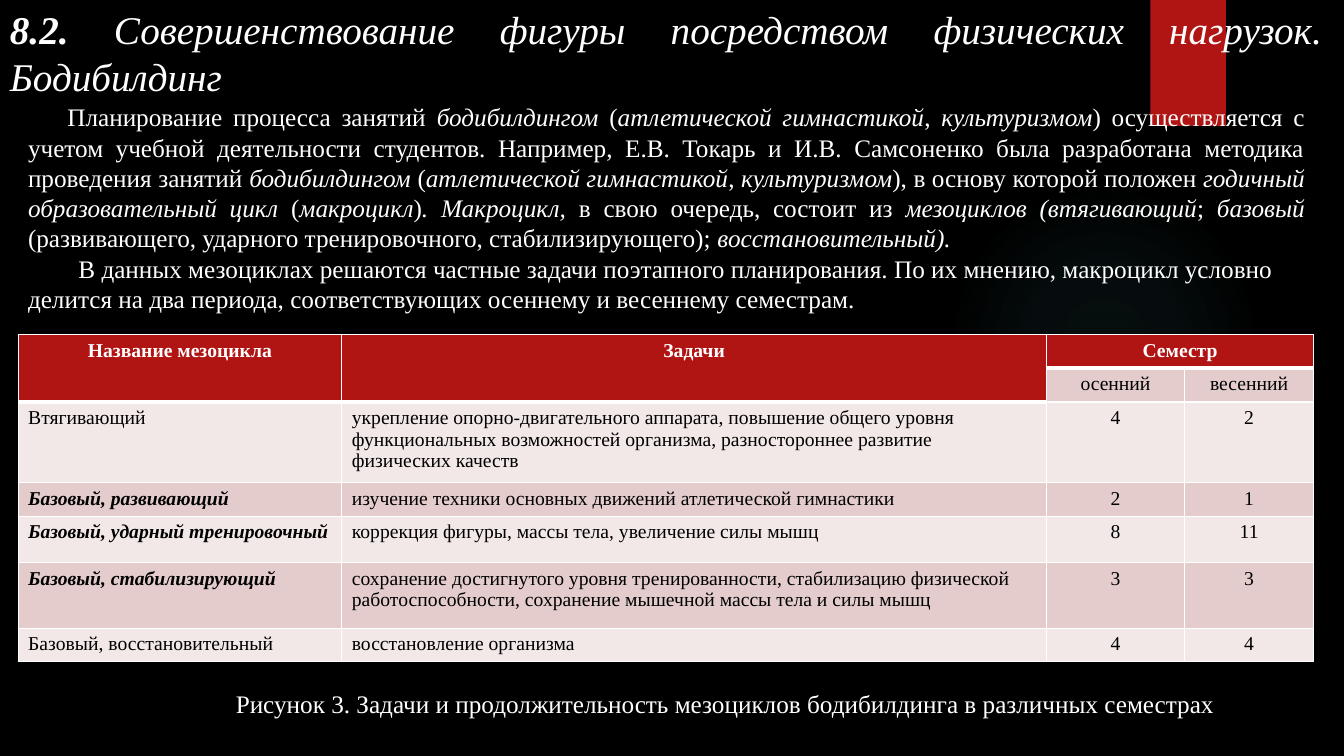
from lxml.etree import SubElement
from pptx import Presentation
from pptx.dml.color import RGBColor
from pptx.enum.shapes import MSO_SHAPE as Shape
from pptx.enum.text import MSO_AUTO_SIZE as AutoSize, PP_ALIGN as Align
from pptx.oxml import parse_xml
from pptx.oxml.ns import nsdecls, qn
from pptx.util import Inches, Pt

FONT = "Times New Roman"
WHITE, BLACK, RED = "FFFFFF", "000000", "B01513"
BANDS = ["F2E8E7", "E4CCCC"]


def color(value):
    return RGBColor.from_string(value)


def style(font, size, value, bold=False, italic=False):
    font.name, font.size = FONT, Pt(size)
    font.bold, font.italic = bold, italic
    font.color.rgb = color(value)


presentation = Presentation()
presentation.slide_width, presentation.slide_height = Inches(13.33), Inches(7.5)
slide = presentation.slides.add_slide(presentation.slide_layouts[6])
slide.background.fill.solid()
slide.background.fill.fore_color.rgb = color(BLACK)

# Soft glow
glow = slide.shapes.add_shape(Shape.OVAL, Inches(9.41), Inches(1.83), Inches(3.08), Inches(3.08))
glow.shadow.inherit = False
glow.line.fill.background()
glow.fill.background()
stops = "".join(
    f'<a:gs pos="{position * 1000}"><a:srgbClr val="50B9C1">'
    f'<a:alpha val="{alpha * 1000}"/></a:srgbClr></a:gs>'
    for position, alpha in [(0, 7), (36, 6), (69, 0), (100, 0)])
gradient = parse_xml(
    f'<a:gradFill {nsdecls("a")} rotWithShape="1"><a:gsLst>{stops}</a:gsLst><a:path path="circle">'
    '<a:fillToRect l="50000" t="50000" r="50000" b="50000"/></a:path></a:gradFill>')
properties = glow.element.spPr
properties.replace(properties.find(qn("a:noFill")), gradient)

# Red ribbon with a shadow
ribbon = slide.shapes.add_shape(Shape.RECTANGLE, Inches(11.41), 0, Inches(0.75), Inches(1.25))
ribbon.fill.solid()
ribbon.fill.fore_color.rgb = color(RED)
ribbon.line.fill.background()
ribbon.shadow.inherit = False
ribbon.element.spPr.find(qn("a:effectLst")).append(parse_xml(
    f'<a:outerShdw {nsdecls("a")} blurRad="{Pt(3)}" dist="{Pt(2)}" dir="5400000" rotWithShape="0">'
    f'<a:srgbClr val="{BLACK}"><a:alpha val="45000"/></a:srgbClr></a:outerShdw>'))

# Title
title = slide.shapes.add_textbox(0, 0, Inches(13.21), Inches(1.51))
title.text_frame.word_wrap = True
title.text_frame.auto_size = AutoSize.SHAPE_TO_FIT_TEXT
paragraph = title.text_frame.paragraphs[0]
paragraph.alignment = Align.JUSTIFY
for text, bold in [
        ("8.2. ", True),
        ("Совершенствование фигуры посредством физических нагрузок. Бодибилдинг", False)]:
    run = paragraph.add_run()
    run.text = text
    style(run.font, 28, WHITE, bold, True)

# Body: asterisks switch italics on and off
body_paragraphs = [
    ("Планирование процесса занятий *бодибилдингом *(*атлетической гимнастикой*, *культуризмом*) "
     "осуществляется с учетом учебной деятельности студентов. Например, Е.В. Токарь и "
     "И.В. Самсоненко была разработана методика проведения занятий *бодибилдингом *("
     "*атлетической гимнастикой*, *культуризмом*), в основу которой положен *годичный "
     "образовательный цикл *(*макроцикл*)*. Макроцикл, *в свою очередь, состоит из "
     "*мезоциклов (втягивающий*; *базовый *(развивающего, ударного тренировочного, "
     "стабилизирующего); *восстановительный).", Align.JUSTIFY, 0.39),
    ("В данных мезоциклах решаются частные задачи поэтапного планирования. По их мнению, "
     "макроцикл условно делится на два периода, соответствующих осеннему и весеннему "
     "семестрам.", Align.LEFT, 0.5),
]
body = slide.shapes.add_textbox(Inches(0.18), Inches(0.96), Inches(12.86), Inches(2.22))
body.text_frame.word_wrap = True
body.text_frame.auto_size = AutoSize.SHAPE_TO_FIT_TEXT
for index, (text, alignment, indent) in enumerate(body_paragraphs):
    paragraph = body.text_frame.add_paragraph() if index else body.text_frame.paragraphs[0]
    paragraph.alignment = alignment
    paragraph._p.get_or_add_pPr().set("indent", str(Inches(indent)))
    for part, words in enumerate(text.split("*")):
        run = paragraph.add_run()
        run.text = words
        style(run.font, 18, WHITE, italic=part % 2 == 1)

# Table of mesocycles
rows = [
    ("Название мезоцикла", "Задачи", "Семестр", ""),
    ("", "", "осенний", "весенний"),
    ("Втягивающий", "укрепление опорно-двигательного аппарата, повышение общего уровня "
     "функциональных возможностей организма, разностороннее развитие физических качеств", "4", "2"),
    ("Базовый, развивающий", "изучение техники основных движений атлетической гимнастики", "2", "1"),
    ("Базовый, ударный тренировочный", "коррекция фигуры, массы тела, увеличение силы мышц",
     "8", "11"),
    ("Базовый, стабилизирующий", "сохранение достигнутого уровня тренированности, стабилизацию "
     "физической работоспособности, сохранение мышечной массы тела и силы мышц", "3", "3"),
    ("Базовый, восстановительный", "восстановление организма", "4", "4"),
]
table = slide.shapes.add_table(
    len(rows), 4, Inches(0.18), Inches(3.32), Inches(12.86), Inches(3.24)).table
for column, width in zip(table.columns, [3.21, 6.99, 1.37, 1.28]):
    column.width = Inches(width)
for row, height in zip(table.rows, [0.33, 0.33, 0.8, 0.33, 0.46, 0.65, 0.33]):
    row.height = Inches(height)
for first, last in [((0, 0), (1, 0)), ((0, 1), (1, 1)), ((0, 2), (0, 3))]:
    table.cell(*first).merge(table.cell(*last))

for r, values in enumerate(rows):
    for c, value in enumerate(values):
        cell = table.cell(r, c)
        header = r == 0 or (r == 1 and c < 2)
        below_header = r == (2 if c < 2 else 1)
        # Borders come before the fill; the header has a heavy lower edge
        widths = {"a:lnL": 1, "a:lnR": 1, "a:lnT": 3 if below_header else 1,
                  "a:lnB": 3 if header else 1}
        for tag, width in widths.items():
            line = SubElement(cell._tc.get_or_add_tcPr(), qn(tag), w=str(Pt(width)))
            SubElement(SubElement(line, qn("a:solidFill")), qn("a:srgbClr"), val=WHITE)
        cell.fill.solid()
        cell.fill.fore_color.rgb = color(RED if header else BANDS[r % 2])
        if value:
            cell.text_frame.text = value
            paragraph = cell.text_frame.paragraphs[0]
            paragraph.alignment = Align.CENTER if header or c > 1 else Align.LEFT
            emphasis = c == 0 and r in (3, 4, 5)
            style(paragraph.runs[0].font, 14, WHITE if header else BLACK,
                  header or emphasis, emphasis)

# Caption
caption = slide.shapes.add_textbox(Inches(2.24), Inches(6.78), Inches(10.13), Inches(0.4))
caption.text_frame.word_wrap = False
caption.text_frame.auto_size = AutoSize.SHAPE_TO_FIT_TEXT
caption.text_frame.text = (
    "Рисунок 3. Задачи и продолжительность мезоциклов бодибилдинга в различных семестрах")
style(caption.text_frame.paragraphs[0].runs[0].font, 18, WHITE)

presentation.save("out.pptx")
